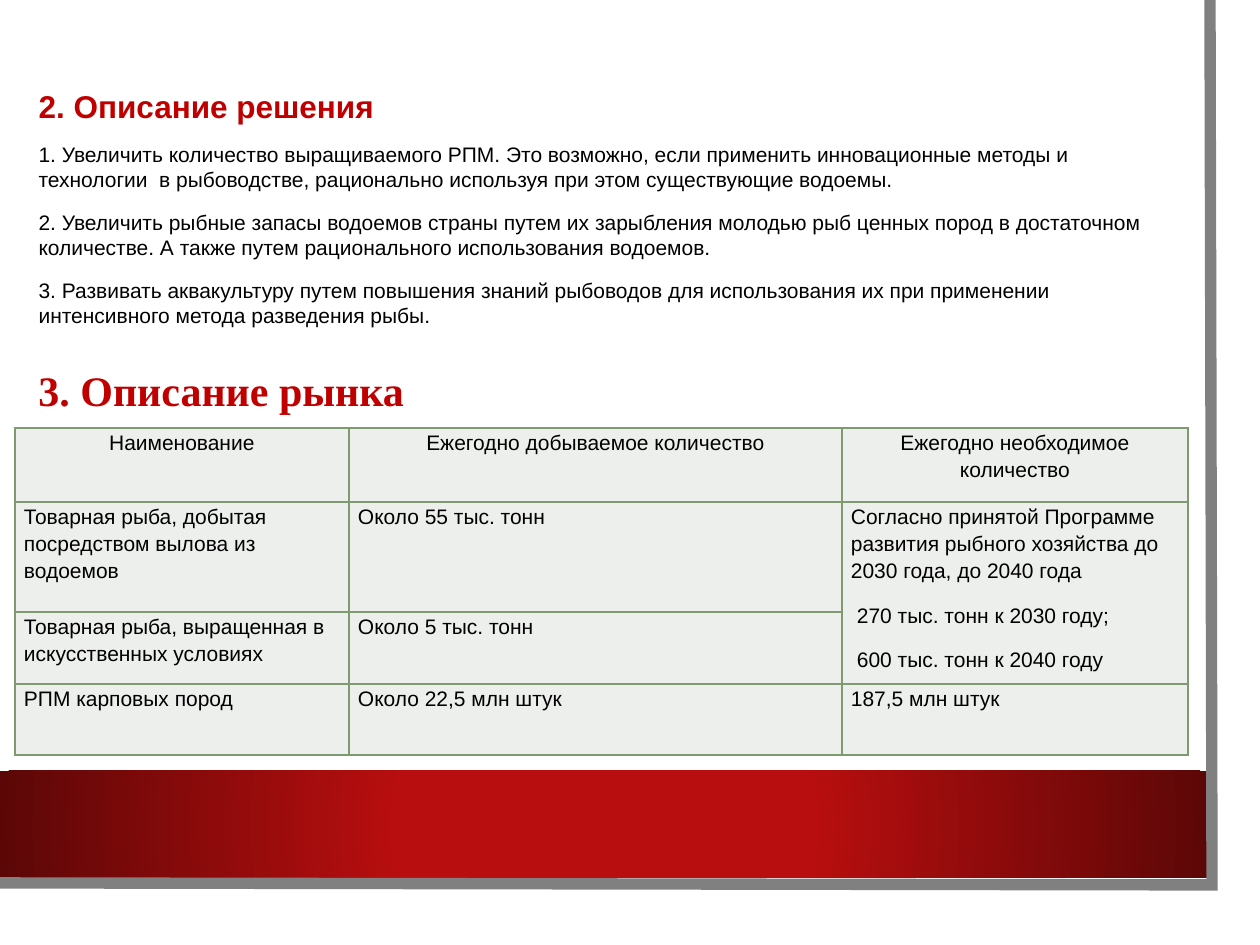
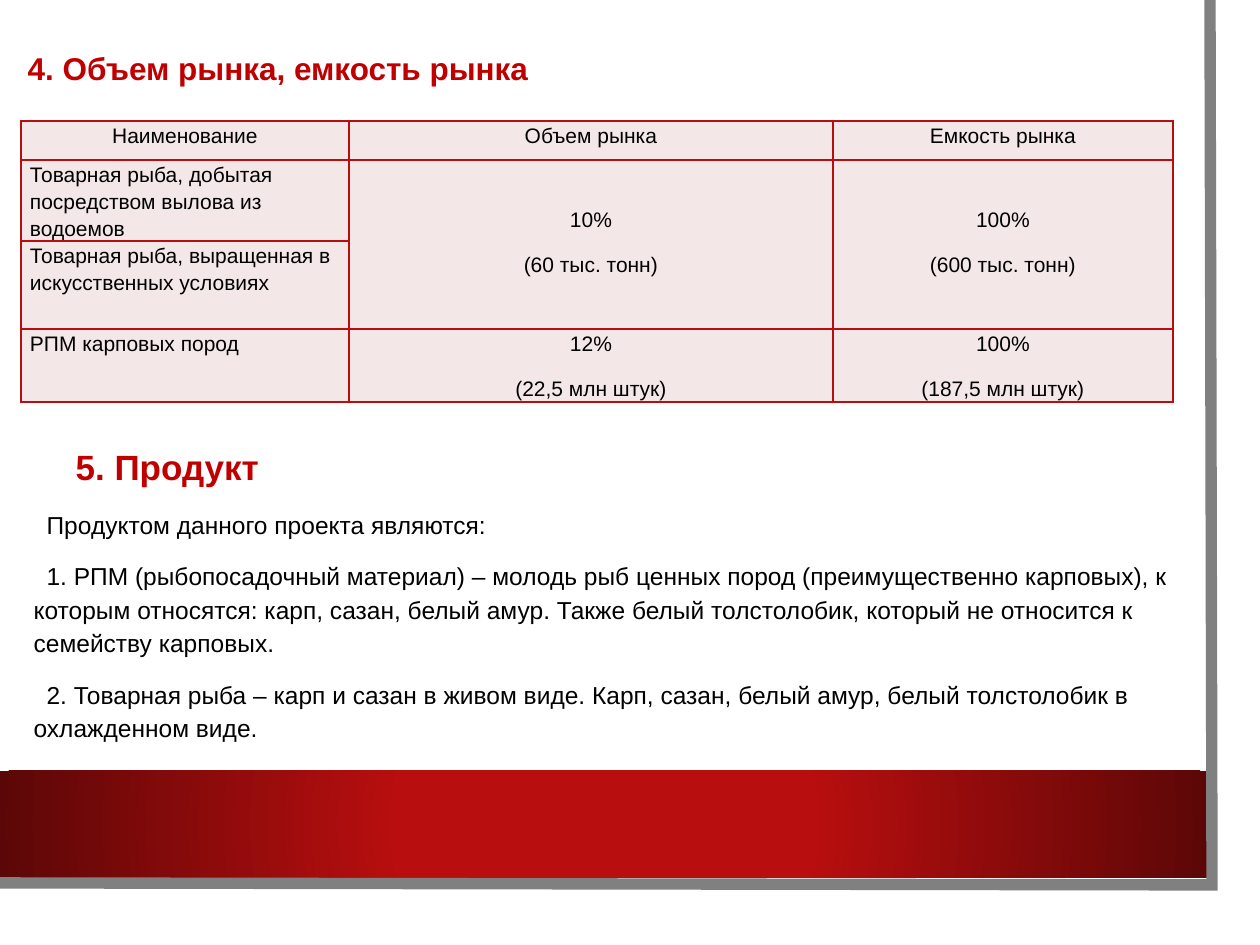
from dataclasses import dataclass

from lxml import etree
from pptx import Presentation
from pptx.dml.color import RGBColor
from pptx.enum.shapes import MSO_SHAPE
from pptx.enum.text import MSO_ANCHOR, MSO_AUTO_SIZE, PP_ALIGN
from pptx.oxml.ns import qn
from pptx.util import Pt

LEFT, CENTER = PP_ALIGN.LEFT, PP_ALIGN.CENTER
TOP = MSO_ANCHOR.TOP
NO_AUTOFIT = MSO_AUTO_SIZE.NONE
RECTANGLE = MSO_SHAPE.RECTANGLE

EMU_PER_PX = 914400 / 126


@dataclass(frozen=True)
class Theme:
    sans: str = "Arial"
    serif: str = "Times New Roman"
    text: str = "000000"
    heading: str = "C00000"
    band: str = "B80E0F"
    band_edge: str = "5C0707"
    frame: str = "808080"
    green_fill: str = "ECEFEB"
    green_line: str = "7F9A71"
    red_fill: str = "F3E7E7"
    red_line: str = "B80E0F"
    small: int = 12
    body: int = 14
    title: int = 18
    product: int = 20
    market: int = 24
    gap: int = 10
    spacing: float = 1.15


THEME = Theme()


def px(length):
    return round(length * EMU_PER_PX)


def box(*lengths):
    return [px(length) for length in lengths]


def sub(parent, tag, **attributes):
    return etree.SubElement(parent, qn(tag), attributes)


# Text
def add_text(frame, text, size=THEME.small, color=THEME.text, font=THEME.sans,
             bold=False, align=LEFT, indent=0, spacing=1.0, after=0):
    """Fill the frame's empty first paragraph, or append one."""
    paragraph = frame.paragraphs[0]
    if paragraph.runs:
        paragraph = frame.add_paragraph()
    properties = paragraph._p.get_or_add_pPr()
    properties.set("marL", "0")
    properties.set("indent", str(px(indent)))
    sub(properties, "a:buNone")
    paragraph.alignment = align
    paragraph.line_spacing = spacing
    paragraph.space_before = Pt(0)
    paragraph.space_after = Pt(after)
    run = paragraph.add_run()
    run.text = text
    run.font.size = Pt(size)
    run.font.name = font
    run.font.bold = bold
    run.font.color.rgb = RGBColor.from_string(color)


def place(shape, bounds):
    """Move a text shape and return its prepared frame."""
    shape.left, shape.top, shape.width, shape.height = box(*bounds)
    frame = shape.text_frame
    frame.word_wrap = True
    frame.auto_size = NO_AUTOFIT
    frame.vertical_anchor = TOP
    return frame


def add_title(slide, text, bounds):
    add_text(place(slide.shapes.title, bounds), text,
             size=THEME.title, color=THEME.heading, bold=True)


# Shared frame and red band
def add_band(shapes):
    band = shapes.add_shape(RECTANGLE, *box(0, 771, 1209, 107))
    band.shadow.inherit = False
    band.line.fill.background()
    properties = band._element.spPr
    gradient = etree.Element(qn("a:gradFill"), rotWithShape="1")
    stops = sub(gradient, "a:gsLst")
    for position, color in ((34, THEME.band), (100, THEME.band_edge)):
        stop = sub(stops, "a:gs", pos=str(position * 1000))
        sub(stop, "a:srgbClr", val=color)
    path = sub(gradient, "a:path", path="circle")
    sub(path, "a:fillToRect", l="50000", t="50000", r="50000", b="50000")
    properties.find(qn("a:prstGeom")).addnext(gradient)
    return band


def add_frame_line(shapes):
    builder = shapes.build_freeform(1210, 0, scale=EMU_PER_PX)
    builder.add_line_segments([(1212, 885), (-2, 883)], close=False)
    edge = builder.convert_to_shape()
    edge.shadow.inherit = False
    edge.fill.background()
    edge.line.color.rgb = RGBColor.from_string(THEME.frame)
    edge.line.width = Pt(6.5)
    sub(edge.line._get_or_add_ln(), "a:miter", lim="800000")
    return edge


def decorate_layout(layout, slide):
    """Draw the shared parts and hand them to the layout."""
    for part in (add_band(slide.shapes), add_frame_line(slide.shapes)):
        layout.shapes._spTree.append(part._element)


# Tables
def style_cell(cell, fill, line):
    properties = cell._tc.get_or_add_tcPr()
    for side in ("a:lnL", "a:lnR", "a:lnT", "a:lnB"):
        border = sub(properties, side, w=str(Pt(1)))
        sub(sub(border, "a:solidFill"), "a:srgbClr", val=line)
    cell.fill.solid()
    cell.fill.fore_color.rgb = RGBColor.from_string(fill)
    cell.margin_left = cell.margin_right = px(9)
    cell.margin_top = cell.margin_bottom = 0


def add_market_table(slide, corner, widths, heights, rows, fill, line,
                     centered=(), merged_top=0):
    """A None entry joins its cell to the one above."""
    bounds = box(*corner, sum(widths), sum(heights))
    table = slide.shapes.add_table(len(rows), len(widths), *bounds).table
    table.first_row = table.horz_banding = False
    for column, width in zip(table.columns, widths):
        column.width = px(width)
    for row, height in zip(table.rows, heights):
        row.height = px(height)
    for r, entries in enumerate(rows):
        for c, entry in enumerate(entries):
            cell = table.cell(r, c)
            style_cell(cell, fill, line)
            if entry is None:
                origin = table.cell(r - 1, c)
                origin.merge(cell)
                origin.margin_top = px(merged_top)
                continue
            align = CENTER if r == 0 or c in centered else LEFT
            for n, text in enumerate(entry.split("\n")):
                add_text(cell.text_frame, text, align=align,
                         indent=6 if n and align == LEFT else 0,
                         spacing=THEME.spacing, after=THEME.gap)


# Content
CAUGHT = "Товарная рыба, добытая посредством вылова из водоемов"
FARMED = "Товарная рыба, выращенная в искусственных условиях"
STOCK = "РПМ карповых пород"

SOLUTIONS = [
    "1. Увеличить количество выращиваемого РПМ. Это возможно, если применить "
    "инновационные методы и технологии  в рыбоводстве, рационально используя "
    "при этом существующие водоемы.",
    "2. Увеличить рыбные запасы водоемов страны путем их зарыбления молодью "
    "рыб ценных пород в достаточном количестве. А также путем рационального "
    "использования водоемов.",
    "3. Развивать аквакультуру путем повышения знаний рыбоводов для "
    "использования их при применении интенсивного метода разведения рыбы.",
]
SUPPLY = [
    ["Наименование", "Ежегодно добываемое количество",
     "Ежегодно необходимое количество"],
    [CAUGHT, "Около 55 тыс. тонн",
     "Согласно принятой Программе развития рыбного хозяйства до 2030 года, "
     "до 2040 года\n270 тыс. тонн к 2030 году;\n600 тыс. тонн к 2040 году"],
    [FARMED, "Около 5 тыс. тонн", None],
    [STOCK, "Около 22,5 млн штук", "187,5 млн штук"],
]
CAPACITY = [
    ["Наименование", "Объем рынка", "Емкость рынка"],
    [CAUGHT, "10%\n(60 тыс. тонн)", "100%\n(600 тыс. тонн)"],
    [FARMED, None, None],
    [STOCK, "12%\n(22,5 млн штук)", "100%\n(187,5 млн штук)"],
]
PRODUCTS = [
    "Продуктом данного проекта являются:",
    "1. РПМ (рыбопосадочный материал) – молодь рыб ценных пород "
    "(преимущественно карповых), к которым относятся: карп, сазан, белый "
    "амур. Также белый толстолобик, который не относится к семейству карповых.",
    "2. Товарная рыба – карп и сазан в живом виде. Карп, сазан, белый амур, "
    "белый толстолобик в охлажденном виде.",
]


def build_solution_slide(slide):
    add_title(slide, "2. Описание решения", (26, 81, 1142, 50))
    solutions = place(slide.placeholders[1], (26, 135, 1142, 203))
    for solution in SOLUTIONS:
        add_text(solutions, solution, after=THEME.gap)
    market = slide.shapes.add_textbox(0, 0, 0, 0)
    add_text(place(market, (26, 358, 396, 62)), "3. Описание рынка",
             size=THEME.market, color=THEME.heading, font=THEME.serif, bold=True)
    add_market_table(slide, (15, 428), (334, 493, 346), (74, 110, 72, 71),
                     SUPPLY, THEME.green_fill, THEME.green_line)


def build_market_slide(slide):
    add_title(slide, "4. Объем рынка, емкость рынка", (15, 43, 544, 50))
    add_market_table(slide, (21, 121), (328, 484, 340), (39, 81, 88, 73),
                     CAPACITY, THEME.red_fill, THEME.red_line,
                     centered=(1, 2), merged_top=45)
    products = place(slide.placeholders[1], (21, 433, 1164, 326))
    add_text(products, "5. Продукт", size=THEME.product, color=THEME.heading,
             bold=True, indent=42, spacing=THEME.spacing, after=THEME.gap)
    for product in PRODUCTS:
        add_text(products, product, size=THEME.body, indent=13,
                 spacing=THEME.spacing, after=THEME.gap)


def main():
    deck = Presentation()
    deck.slide_width, deck.slide_height = box(1260, 945)
    layout = deck.slide_layouts[1]
    solution = deck.slides.add_slide(layout)
    decorate_layout(layout, solution)
    build_solution_slide(solution)
    build_market_slide(deck.slides.add_slide(layout))
    deck.save("out.pptx")


if __name__ == "__main__":
    main()
